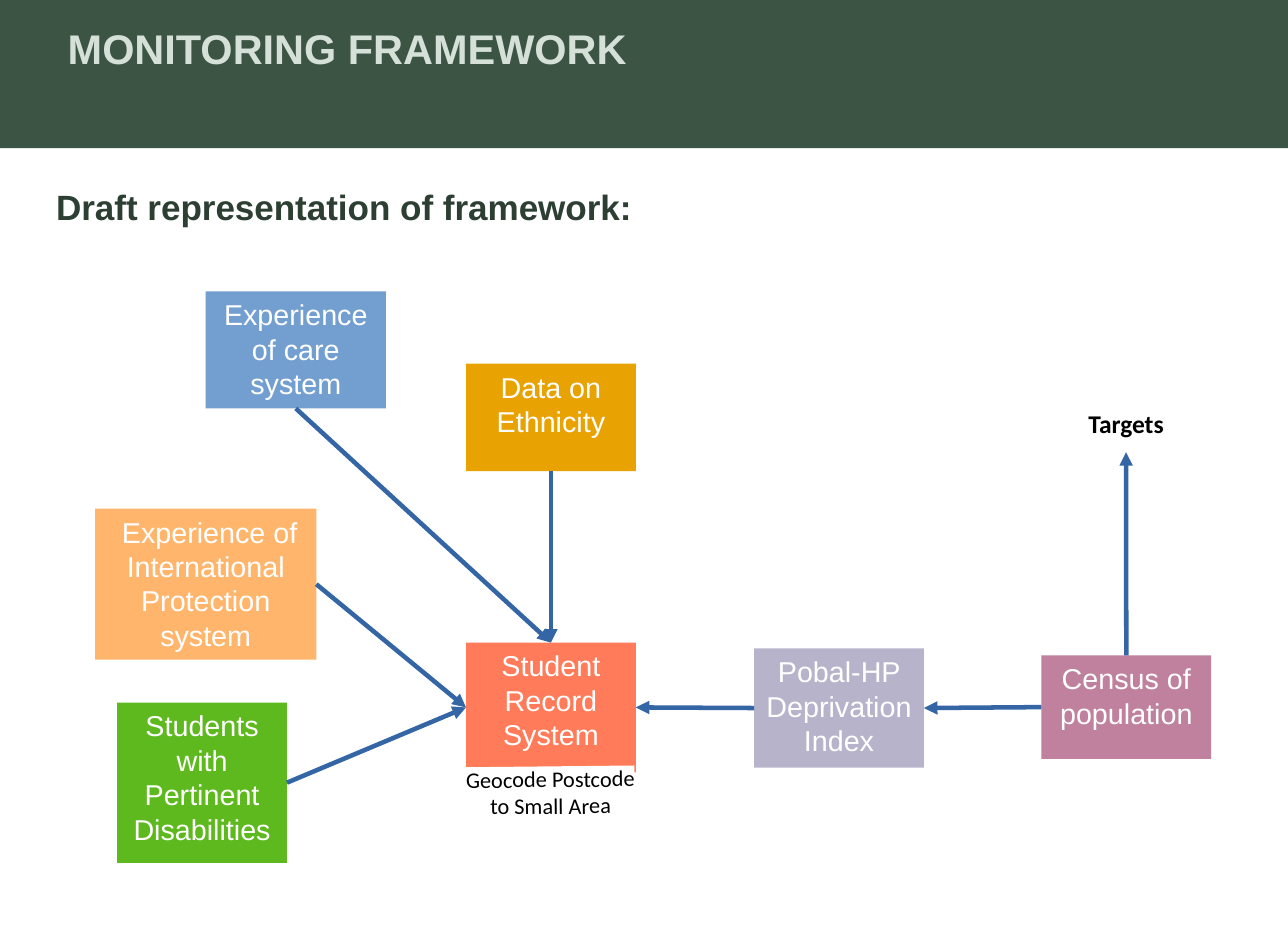
import pptx
import pptx.dml.color
import pptx.enum.shapes
import pptx.enum.text
import pptx.oxml
import pptx.oxml.ns
import pptx.util

Pt = pptx.util.Pt
RGBColor = pptx.dml.color.RGBColor
ALIGN = pptx.enum.text.PP_ALIGN

WHITE = RGBColor(0xFF, 0xFF, 0xFF)
BLACK = RGBColor(0x00, 0x00, 0x00)
BAND_GREEN = RGBColor(0x3C, 0x54, 0x43)
TITLE_GREEN = RGBColor(0xD4, 0xE0, 0xD8)
HEADING_GREEN = RGBColor(0x2D, 0x3F, 0x32)
ARROW_BLUE = RGBColor(0x34, 0x65, 0xA4)
CARE_BLUE = RGBColor(0x72, 0x9F, 0xCF)
ETHNICITY_GOLD = RGBColor(0xE8, 0xA2, 0x02)
PROTECTION_ORANGE = RGBColor(0xFF, 0xB6, 0x6C)
DISABILITY_GREEN = RGBColor(0x5E, 0xB9, 0x1E)
RECORD_CORAL = RGBColor(0xFF, 0x7B, 0x59)
INDEX_LILAC = RGBColor(0xB7, 0xB3, 0xCA)
CENSUS_MAUVE = RGBColor(0xBF, 0x81, 0x9E)

# Connection sites of a rectangle
TOP, LEFT, BOTTOM, RIGHT = range(4)

# name: left, top, width, height, fill, text
SOURCES = {
    "index": (473, 406.8, 106.5, 74.9, INDEX_LILAC, "Pobal-HP Deprivation Index"),
    "ethnicity": (292.3, 228.2, 106.5, 67.5, ETHNICITY_GOLD, "Data on Ethnicity"),
    "record": (292.3, 403.2, 106.5, 81.4, RECORD_CORAL, "Student Record System"),
    "disability": (73.5, 440.8, 106.5, 100.6, DISABILITY_GREEN,
                   "Students with Pertinent Disabilities"),
    "care": (129, 182.9, 113.1, 73.4, CARE_BLUE, "Experience of care system"),
    "census": (653.2, 411.2, 106.5, 65, CENSUS_MAUVE, "Census of population"),
    "protection": (59.6, 319.2, 138.8, 94.7, PROTECTION_ORANGE,
                   " Experience of International Protection system"),
}

ARROWS = [
    ("index", LEFT, "record", RIGHT),
    ("census", LEFT, "index", RIGHT),
    ("disability", RIGHT, "record", LEFT),
    ("protection", RIGHT, "record", LEFT),
    ("ethnicity", BOTTOM, "record", TOP),
    ("care", BOTTOM, "record", TOP),
    ("census", TOP, "targets", BOTTOM),
]


def add_highlight(run):
    """Put a white highlight behind the run; its colour must already be set."""
    namespace = pptx.oxml.ns.nsdecls("a")
    highlight = pptx.oxml.parse_xml(
        f'<a:highlight {namespace}><a:srgbClr val="{WHITE}"/></a:highlight>')
    run.font.fill  # the highlight follows the fill element
    run._r.get_or_add_rPr().find(pptx.oxml.ns.qn("a:solidFill")).addnext(highlight)


def write_text(shape, lines, size, color, font="Arial", bold=False,
               align=ALIGN.CENTER, margins=(7.2, 3.6), highlighted=False):
    """Fill the shape with one paragraph, with a line break between lines."""
    frame = shape.text_frame
    frame.word_wrap = True
    frame.vertical_anchor = pptx.enum.text.MSO_ANCHOR.TOP
    frame.margin_left = frame.margin_right = Pt(margins[0])
    frame.margin_top = frame.margin_bottom = Pt(margins[1])
    paragraph = frame.paragraphs[0]
    paragraph.alignment = align
    for number, line in enumerate(lines):
        if number:
            paragraph.add_line_break()
        run = paragraph.add_run()
        run.text = line
        run.font.size = Pt(size)
        run.font.bold = bold
        run.font.color.rgb = color
        if highlighted:
            add_highlight(run)
        run.font.name = font


def add_box(slide, left, top, width, height, fill):
    box = slide.shapes.add_shape(pptx.enum.shapes.MSO_SHAPE.RECTANGLE,
                                 Pt(left), Pt(top), Pt(width), Pt(height))
    box.shadow.inherit = False
    box.fill.solid()
    box.fill.fore_color.rgb = fill
    box.line.fill.background()
    return box


def add_label(slide, left, top, width, height, lines, size, color, **style):
    label = slide.shapes.add_textbox(Pt(left), Pt(top), Pt(width), Pt(height))
    write_text(label, lines, size, color, **style)
    return label


def add_arrow(slide, start, start_site, end, end_site):
    arrow = slide.shapes.add_connector(
        pptx.enum.shapes.MSO_CONNECTOR.STRAIGHT, 0, 0, 0, 0)
    arrow.begin_connect(start, start_site)
    arrow.end_connect(end, end_site)
    arrow.line.color.rgb = ARROW_BLUE
    arrow.line.width = Pt(2.83)
    namespace = pptx.oxml.ns.nsdecls("a")
    arrow.line._get_or_add_ln().append(
        pptx.oxml.parse_xml(f'<a:tailEnd {namespace} type="triangle"/>'))
    arrow._element.spPr.append(pptx.oxml.parse_xml(f"<a:effectLst {namespace}/>"))


def main():
    presentation = pptx.Presentation()
    presentation.slide_width = Pt(807.84)
    presentation.slide_height = Pt(595.44)
    slide = presentation.slides.add_slide(presentation.slide_layouts[6])

    band = add_box(slide, 0, 0, 807.84, 92.9, BAND_GREEN)
    write_text(band, ["MONITORING FRAMEWORK"], 26, TITLE_GREEN, bold=True,
               align=ALIGN.LEFT, margins=(42.5, 14.4))
    add_label(slide, 28.1, 113, 411.1, 42.5, ["Draft representation of framework:"],
              22, HEADING_GREEN, bold=True, align=ALIGN.LEFT)

    nodes = {}
    for name, (left, top, width, height, fill, text) in SOURCES.items():
        nodes[name] = add_box(slide, left, top, width, height, fill)
        write_text(nodes[name], [text], 18, WHITE)
    nodes["targets"] = add_label(slide, 666.7, 252.7, 79.2, 31, ["Targets"], 16, BLACK,
                                 font="Calibri", bold=True, highlighted=True)

    for start, start_site, end, end_site in ARROWS:
        add_arrow(slide, nodes[start], start_site, nodes[end], end_site)

    geocode = add_label(slide, 266.4, 476.6, 157.7, 45.4,
                        ["Geocode Postcode", "to Small Area"], 14, BLACK,
                        font="Calibri", highlighted=True)
    geocode.rotation = 359.4

    presentation.save("out.pptx")


if __name__ == "__main__":
    main()
